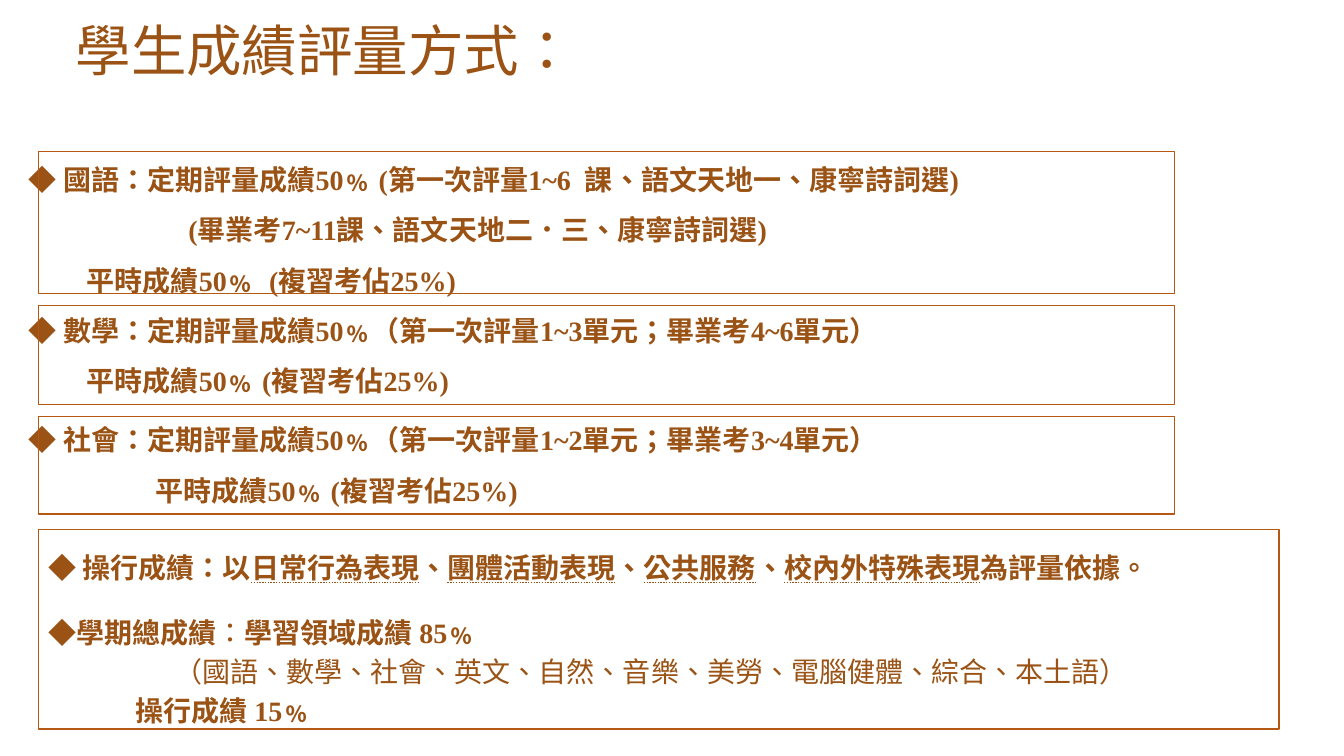
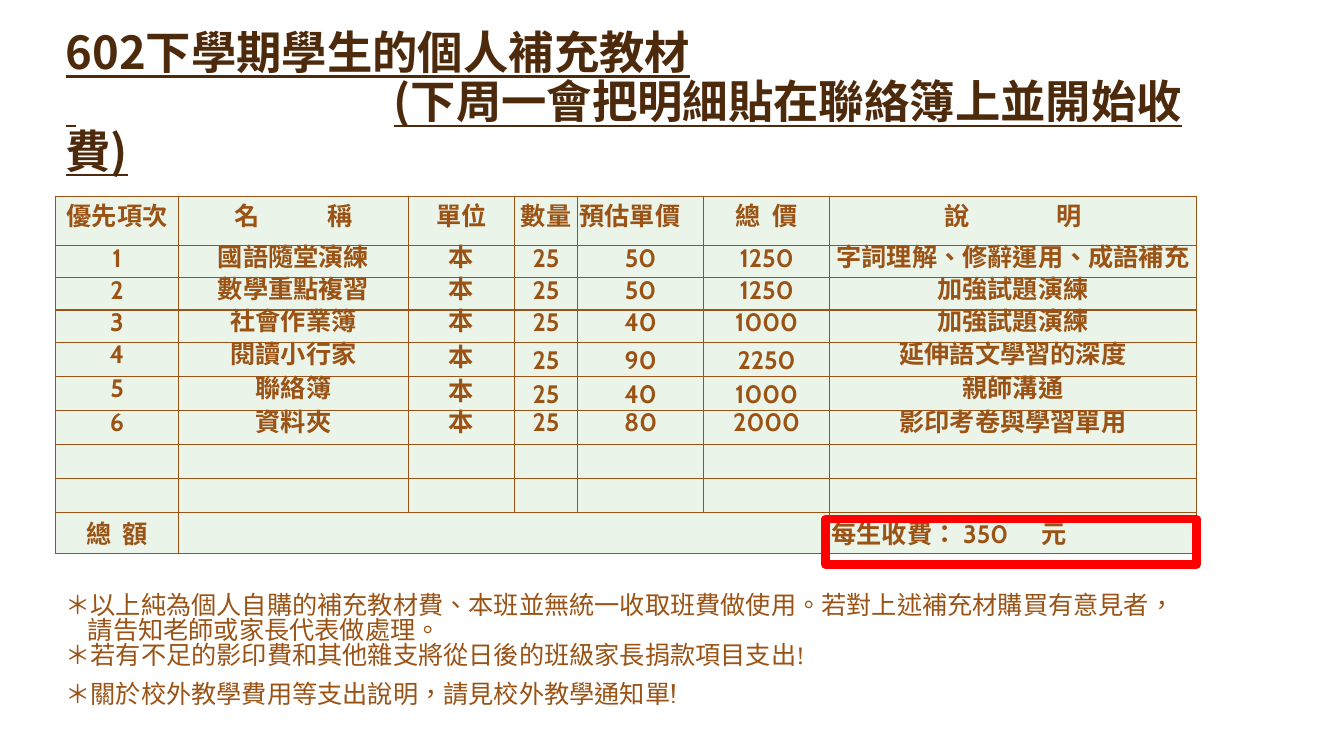
from dataclasses import dataclass

from lxml import etree
from pptx import Presentation
from pptx.dml.color import RGBColor
from pptx.enum.shapes import MSO_SHAPE
from pptx.enum.text import MSO_ANCHOR, MSO_TEXT_UNDERLINE_TYPE, PP_ALIGN
from pptx.oxml import parse_xml
from pptx.oxml.ns import nsdecls, qn
from pptx.util import Pt

RECTANGLE = MSO_SHAPE.RECTANGLE
TOP, MIDDLE, BOTTOM = MSO_ANCHOR.TOP, MSO_ANCHOR.MIDDLE, MSO_ANCHOR.BOTTOM
LEFT, CENTER = PP_ALIGN.LEFT, PP_ALIGN.CENTER
DOTTED = MSO_TEXT_UNDERLINE_TYPE.DOTTED_LINE


@dataclass(frozen=True)
class Theme:
    brown: str = "9A5315"
    dark: str = "4D2A0B"
    frame: str = "B45813"
    red: str = "FF0000"
    pale: str = "EBF4E8"
    chinese: str = "Noto Sans CJK SC"
    serif: str = "Times New Roman"
    sans: str = "Cabin"
    title: float = 39.6
    subtitle: float = 32.4
    body: float = 20
    small: float = 18


theme = Theme()


def write_spans(para, spans, size, font, color=theme.brown, bold=False):
    """Write strings as runs; a number is a space widened by that many points."""
    for span in spans:
        run = para.add_run()
        run.text = span if isinstance(span, str) else " "
        run.font.size = Pt(size)
        run.font.bold = bold
        run.font.color.rgb = RGBColor.from_string(color)
        run.font.name = font
        properties = run._r.get_or_add_rPr()
        properties.set("lang", "zh-TW")
        if not isinstance(span, str):
            properties.set("spc", str(round(span * 100)))
        etree.SubElement(properties, qn("a:ea"), typeface=theme.chinese)


def add_text(page, place, lines, pitch, *style):
    """Add a text box; each line is (spans, indent, space before)."""
    box = page.shapes.add_textbox(*map(Pt, place))
    frame = box.text_frame
    frame.word_wrap = True
    frame.margin_left = frame.margin_right = frame.margin_top = frame.margin_bottom = 0
    for number, (spans, indent, before) in enumerate(lines):
        para = frame.add_paragraph() if number else frame.paragraphs[0]
        para.line_spacing = Pt(pitch)
        if before:
            para.space_before = Pt(before)
        if indent:
            para._p.get_or_add_pPr().set("marL", str(Pt(indent)))
        write_spans(para, spans, *style)
    return frame.paragraphs


deck = Presentation()
deck.slide_width, deck.slide_height = Pt(960), Pt(540)
blank = deck.slide_layouts[6]

# Slide 1: grading
page = deck.slides.add_slide(blank)
add_text(page, (54, 2, 780, 58), [(["學生成績評量方式："], 0, 0)], 57,
         theme.title, theme.chinese)

# Subject scores
subjects = [
    (["◆ 國語：定期評量成績50﹪ (第一次評量1~6", 5, "課、語文天地一、康寧詩詞選)"], 0, 0),
    (["(畢業考7~11課、語文天地二．三、康寧詩詞選)"], 114, 0),
    (["平時成績50﹪", 5, "(複習考佔25%)"], 41.5, 0),
    (["◆ 數學：定期評量成績50﹪（第一次評量1~3單元；畢業考4~6單元）"], 0, 0),
    (["平時成績50﹪ (複習考佔25%)"], 41.5, 0),
    (["◆ 社會：定期評量成績50﹪（第一次評量1~2單元；畢業考3~4單元）"], 0, 6),
    (["平時成績50﹪ (複習考佔25%)"], 90.5, 0),
]
add_text(page, (20.5, 104, 850, 258), subjects, 36, theme.body, theme.serif,
         theme.brown, True)

# Conduct and term totals
totals = [
    (["◆ 操行成績：以", "日常行為表現", "、", "團體活動表現", "、", "公共服務", "、",
      "校內外特殊表現", "為評量依據。"], 0, 0),
    (["◆", "學期總成績", "：", "學習領域成績 85﹪"], 0, 18.5),
    (["（國語、數學、社會、英文、自然、音樂、美勞、電腦健體、綜合、本土語）"], 90, 0),
    (["操行成績 15﹪"], 62.5, 0),
]
conduct, term, areas, _ = add_text(page, (34.5, 389, 872, 131), totals, 28,
                                   theme.body, theme.serif, theme.brown, True)
for run in conduct.runs[1::2]:
    run.font.underline = DOTTED
for run in (*term.runs[::2], *areas.runs):
    run.font.bold = False

# Frames around the groups, and the red one on the next page
fee_page = deck.slides.add_slide(blank)
frames = [
    (page, (27.4, 108, 811.4, 101.5), theme.frame, 1),
    (page, (27.4, 218.2, 811.4, 70.6), theme.frame, 1),
    (page, (27.4, 297.4, 811.4, 69.8), theme.frame, 1),
    (page, (27.4, 378, 886.3, 142.6), theme.frame, 1),
    (fee_page, (589.7, 370.8, 265, 32.4), theme.red, 6),
]

# Slide 2: title
heading = [
    (["602下學期學生的個人補充教材"], 0, 0),
    ([227, "(下周一會把明細貼在聯絡簿上並開始收費)"], 0, 0),
]
for para in add_text(fee_page, (46.8, 21, 838, 106), heading, 35.2,
                     theme.subtitle, theme.chinese, theme.dark, True):
    for run in para.runs:
        run.font.underline = True

# Table of materials
items = [
    ("國語隨堂演練", 50, "字詞理解、修辭運用、成語補充"),
    ("數學重點複習", 50, "加強試題演練"),
    ("社會作業簿", 40, "加強試題演練"),
    ("閱讀小行家", 90, "延伸語文學習的深度"),
    ("聯絡簿", 40, "親師溝通"),
    ("資料夾", 80, "影印考卷與學習單用"),
]
pupils = 25
rows = [[["優先項次"], ["名", 44.5, "稱"], ["單位"], ["數量"], ["預估單價"],
         ["總", 4, "價"], ["說", 57.5, "明"]]]
for number, (name, price, remark) in enumerate(items, 1):
    values = (number, name, "本", pupils, price, pupils * price, remark)
    rows.append([[str(value)] for value in values])
rows += [[[]] * 7] * 2
rows.append([["總", 4, "額"], [], [], [], [], [], ["每生收費： 350", 20, "元"]])

widths = [88, 164, 76, 45, 90, 90, 262]
heights = [35.3] + [23] * 3 + [24.3] * 5 + [29.3]
last = len(rows) - 1
table = fee_page.shapes.add_table(len(rows), len(widths), Pt(39.6), Pt(140.2),
                                  Pt(sum(widths)), Pt(sum(heights))).table
table.first_row = table.horz_banding = False
for column, width in zip(table.columns, widths):
    column.width = Pt(width)
for row, height in zip(table.rows, heights):
    row.height = Pt(height)
table.cell(last, 1).merge(table.cell(last, 5))

for r, row in enumerate(rows):
    for c, spans in enumerate(row):
        cell = table.cell(r, c)
        cell.margin_left = cell.margin_right = Pt(1.4)
        cell.margin_top = cell.margin_bottom = 0
        cell.vertical_anchor = TOP
        if r == last or (r in (4, 5) and c == 2):
            cell.vertical_anchor = MIDDLE
        elif r in (4, 5) and c in (3, 4, 5):
            cell.vertical_anchor = BOTTOM
        cell.fill.solid()
        cell.fill.fore_color.rgb = RGBColor.from_string(theme.pale)
        for position, side in enumerate("LRTB"):
            border = parse_xml(
                f'<a:ln{side} {nsdecls("a")} w="{Pt(1)}"><a:solidFill>'
                f'<a:srgbClr val="{theme.brown}"/></a:solidFill></a:ln{side}>')
            cell._tc.get_or_add_tcPr().insert(position, border)
        para = cell.text_frame.paragraphs[0]
        para.alignment = LEFT if (r, c) in ((0, 4), (last, 6)) else CENTER
        if 0 < r < last:
            para.line_spacing = Pt(20)
        write_spans(para, spans, theme.small, theme.sans, theme.brown, True)

# Notes
notes = [
    (["＊以上純為個人自購的補充教材費、本班並無統一收取班費做使用。若對上述補充材購買有意見者，"], 0, 0),
    (["請告知老師或家長代表做處理。"], 16, 0),
    (["＊若有不足的影印費和其他雜支將從日後的班級家長捐款項目支出!"], 0, 0),
    (["＊關於校外教學費用等支出說明，請見校外教學通知單!"], 0, 9),
]
*_, trip = add_text(fee_page, (46.8, 424, 885, 81), notes, 18.2, theme.small, theme.serif)
trip.runs[0].font.name = theme.sans

# Draw the frames above the text
for target, place, color, weight in frames:
    outline = target.shapes.add_shape(RECTANGLE, *map(Pt, place))
    outline.shadow.inherit = False
    outline.fill.background()
    outline.line.color.rgb = RGBColor.from_string(color)
    outline.line.width = Pt(weight)

deck.save("out.pptx")
